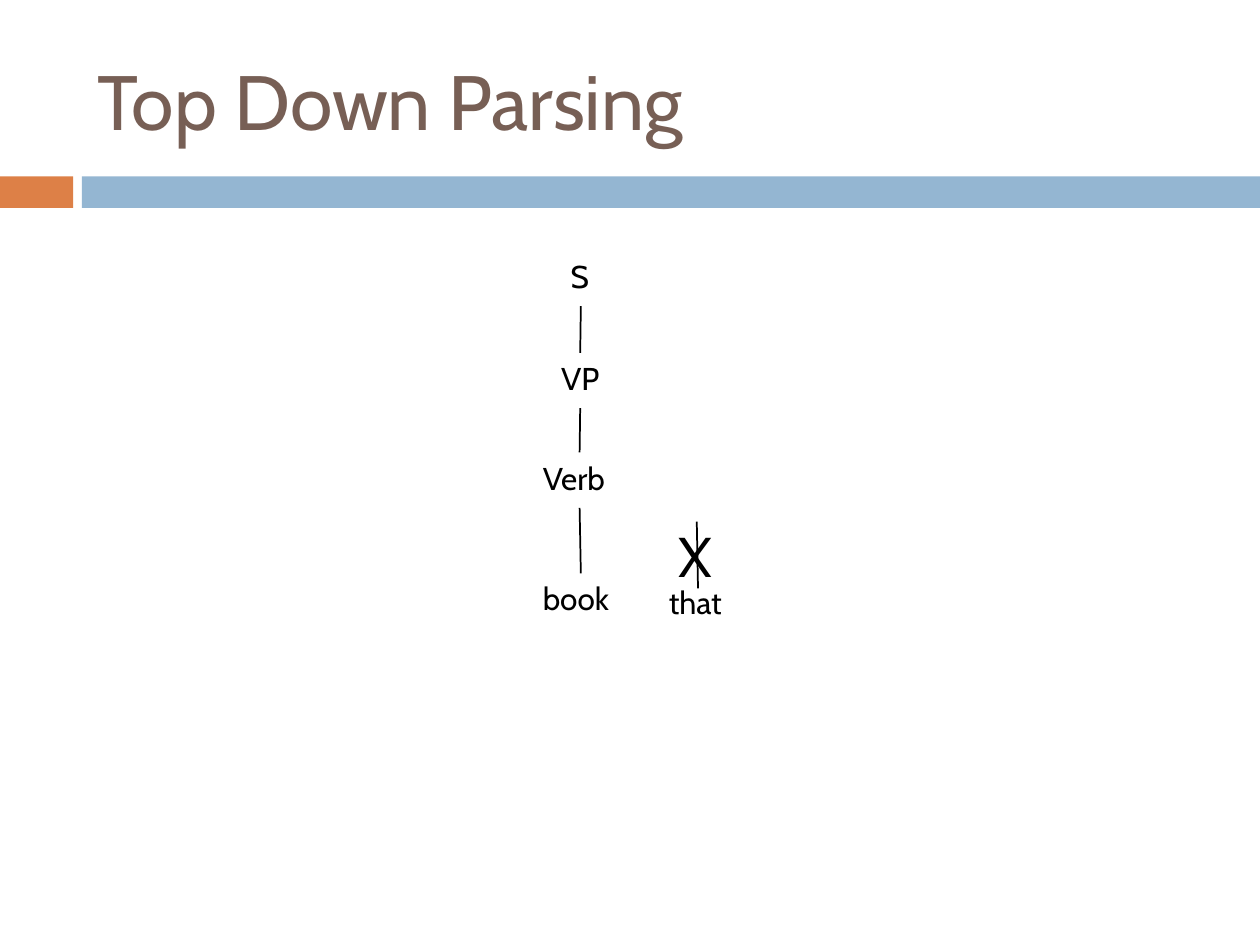
"""Build the Top Down Parsing slide with its parse tree."""
from dataclasses import dataclass

from lxml import etree
from pptx import Presentation
from pptx import util as u
from pptx.dml.color import RGBColor
from pptx.enum import shapes, text
from pptx.oxml.ns import qn

FONT = "Cabin"
BLACK = "000000"
BAR_TOP, BAR_HEIGHT = 1.4, 0.25


@dataclass
class Node:
    """A word of the parse tree and its box in inches."""
    label: str
    left: float
    top: float
    width: float
    height: float = 0.44
    size: int = 18
    align: text.PP_ALIGN = text.PP_ALIGN.LEFT


CHAIN = [
    Node("S", 4.43, 1.99, 0.36),
    Node("VP", 4.25, 2.8, 0.71, align=text.PP_ALIGN.CENTER),
    Node("Verb", 4.21, 3.59, 0.78),
    Node("book", 4.21, 4.55, 0.8),
]
REJECTED = [
    Node("X", 5.29, 4.09, 0.53, 0.64, 32),
    Node("that", 5.21, 4.58, 0.68),
]


def color(value: str) -> RGBColor:
    """Turn a hex string into a colour."""
    return RGBColor.from_string(value)


def write(shape, content: str, *, size: int, fill: str = BLACK,
          anchor=text.MSO_ANCHOR.TOP, align=text.PP_ALIGN.LEFT) -> None:
    """Put formatted text into a shape."""
    frame = shape.text_frame
    frame.word_wrap = True
    frame.auto_size = text.MSO_AUTO_SIZE.NONE
    frame.vertical_anchor = anchor
    paragraph = frame.paragraphs[0]
    paragraph.alignment = align
    run = paragraph.add_run()
    run.text = content
    run.font.name = FONT
    run.font.size = u.Pt(size)
    run.font.color.rgb = color(fill)


def add_bar(slide, left: float, width: float, fill: str) -> None:
    """Draw one part of the band below the title."""
    shape = slide.shapes.add_shape(
        shapes.MSO_SHAPE.RECTANGLE, u.Inches(left), u.Inches(BAR_TOP),
        u.Inches(width), u.Inches(BAR_HEIGHT))
    shape.shadow.inherit = False
    shape.fill.solid()
    shape.fill.fore_color.rgb = color(fill)
    shape.line.fill.background()


def add_node(slide, node: Node):
    """Draw a tree word and return its box."""
    shape = slide.shapes.add_textbox(
        u.Inches(node.left), u.Inches(node.top),
        u.Inches(node.width), u.Inches(node.height))
    write(shape, node.label, size=node.size, align=node.align)
    return shape


def add_line(slide, start: tuple[float, float] = (0, 0),
             end: tuple[float, float] = (0, 0)):
    """Draw a thin black branch."""
    line = slide.shapes.add_connector(
        shapes.MSO_CONNECTOR.STRAIGHT, *map(u.Inches, start + end))
    line.line.color.rgb = color(BLACK)
    line.line.width = u.Pt(1)
    etree.SubElement(line._element.spPr, qn("a:effectLst"))
    return line


def main() -> None:
    """Build and save the slide."""
    presentation = Presentation()
    presentation.slide_width = u.Inches(10)
    presentation.slide_height = u.Inches(7.5)
    slide = presentation.slides.add_slide(presentation.slide_layouts[5])

    add_bar(slide, 0, 0.58, "DD8047")
    add_bar(slide, 0.65, 9.35, "94B6D2")

    title = slide.shapes.title
    title.left, title.top = u.Inches(0.67), u.Inches(0.25)
    title.width, title.height = u.Inches(8.92), u.Inches(1.08)
    write(title, "Top Down Parsing", size=44, fill="775F55",
          anchor=text.MSO_ANCHOR.MIDDLE)

    boxes = [add_node(slide, node) for node in CHAIN]
    for parent, child in zip(boxes, boxes[1:]):
        branch = add_line(slide)
        branch.begin_connect(parent, 2)
        branch.end_connect(child, 0)

    for node in REJECTED:
        add_node(slide, node)
    add_line(slide, (5.53, 4.14), (5.54, 4.67))

    presentation.save("out.pptx")


if __name__ == "__main__":
    main()
